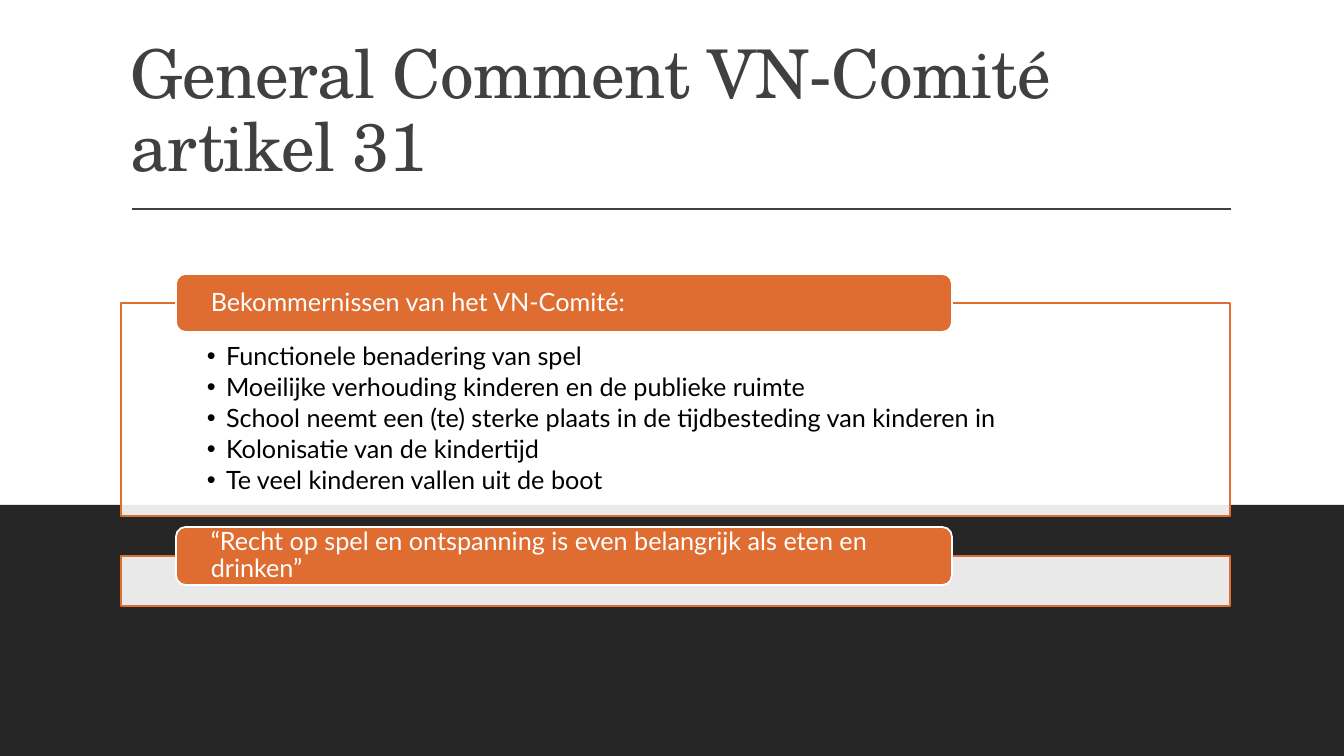
from lxml import etree
from pptx import Presentation
from pptx import util as u
from pptx.dml.color import RGBColor
from pptx.enum import shapes, text
from pptx.oxml.ns import qn

COLORS = {"dark": "262626", "title": "404040", "accent": "DF6C31",
          "white": "FFFFFF", "black": "000000"}
CONCERNS = [
    "Functionele benadering van spel",
    "Moeilijke verhouding kinderen en de publieke ruimte",
    "School neemt een (te) sterke plaats in de tijdbesteding van kinderen in",
    "Kolonisatie van de kindertijd",
    "Te veel kinderen vallen uit de boot",
]
# label text, frame height, frame top, bullets
SECTIONS = [
    ("Bekommernissen van het VN-Comité:", 213, 303, CONCERNS),
    ("“Recht op spel en ontspanning is even belangrijk als eten en drinken”", 50, 556, []),
]
LABEL_RISE = 29
PX = 12192000 / 1344


def add_box(kind, left, top, width, height, fill, line=None):
    shape = slide.shapes.add_shape(kind, *[round(v * PX) for v in (left, top, width, height)])
    shape.shadow.inherit = False
    shape.fill.solid()
    shape.fill.fore_color.rgb = RGBColor.from_string(COLORS[fill])
    if line:
        shape.line.color.rgb = RGBColor.from_string(COLORS[line])
        shape.line.width = u.Pt(1.25)
    else:
        shape.line.fill.background()
    return shape


def write(shape, lines, insets, anchor, font, size, color):
    """Set left-aligned paragraphs in a shape; insets are left, top, right, bottom in px."""
    frame = shape.text_frame
    frame.word_wrap = True
    frame.auto_size = text.MSO_AUTO_SIZE.NONE
    frame.vertical_anchor = anchor
    frame.margin_left, frame.margin_top, frame.margin_right, frame.margin_bottom = [
        round(v * PX) for v in insets]
    for index, line in enumerate(lines):
        paragraph = frame.add_paragraph() if index else frame.paragraphs[0]
        paragraph.alignment = text.PP_ALIGN.LEFT
        paragraph.line_spacing = 0.9
        run = paragraph.add_run()
        run.text = line
        run.font.name = font
        run.font.size = u.Pt(size)
        run.font.color.rgb = RGBColor.from_string(COLORS[color])
    return frame.paragraphs


presentation = Presentation()
presentation.slide_width, presentation.slide_height = round(1344 * PX), round(756 * PX)
slide = presentation.slides.add_slide(presentation.slide_layouts[5])

# Dark lower band with its footer strip
for top, height in ((505, 251), (706, 50)):
    add_box(shapes.MSO_SHAPE.RECTANGLE, 0, top, 1344, height, "dark")

# Title and rule
title = slide.shapes.title
title.left, title.top, title.width, title.height = [round(v * PX) for v in (121, 31, 1109, 160)]
heading = write(title, ["General Comment VN-Comité artikel 31"], (10, 5, 10, 5),
                text.MSO_ANCHOR.BOTTOM, "TeX Gyre Schola", 48, "title")
heading[0].runs[0].font._element.set("spc", "-50")

rule = slide.shapes.add_connector(shapes.MSO_CONNECTOR.STRAIGHT,
                                  *[round(v * PX) for v in (132, 209, 1231, 209)])
rule.line.color.rgb = RGBColor.from_string(COLORS["title"])
rule.line.width = u.Pt(1)
etree.SubElement(rule._element.spPr, qn("a:effectLst"))

# Framed sections, each with a label over its top edge
for label_text, height, top, bullets in SECTIONS:
    frame_box = add_box(shapes.MSO_SHAPE.RECTANGLE, 121, top, 1109, height, "white", "accent")
    fill_color = frame_box._element.spPr.find(qn("a:solidFill"))[0]
    etree.SubElement(fill_color, qn("a:alpha")).set("val", "90000")
    if bullets:
        for paragraph in write(frame_box, bullets, (86, 41, 86, 14),
                               text.MSO_ANCHOR.TOP, "Lato", 18, "black"):
            paragraph.space_after = u.Pt(2.7)
            properties = paragraph._p.get_or_add_pPr()
            properties.set("marL", str(round(19 * PX)))
            properties.set("indent", str(round(-19 * PX)))
            etree.SubElement(properties, qn("a:buFont")).set("typeface", "Arial")
            etree.SubElement(properties, qn("a:buChar")).set("char", "•")

    label = add_box(shapes.MSO_SHAPE.ROUNDED_RECTANGLE, 176, top - LABEL_RISE, 776, 58,
                    "accent", "white")
    write(label, [label_text], (32, 0, 32, 0), text.MSO_ANCHOR.MIDDLE, "Lato", 18, "white")

presentation.save("out.pptx")
